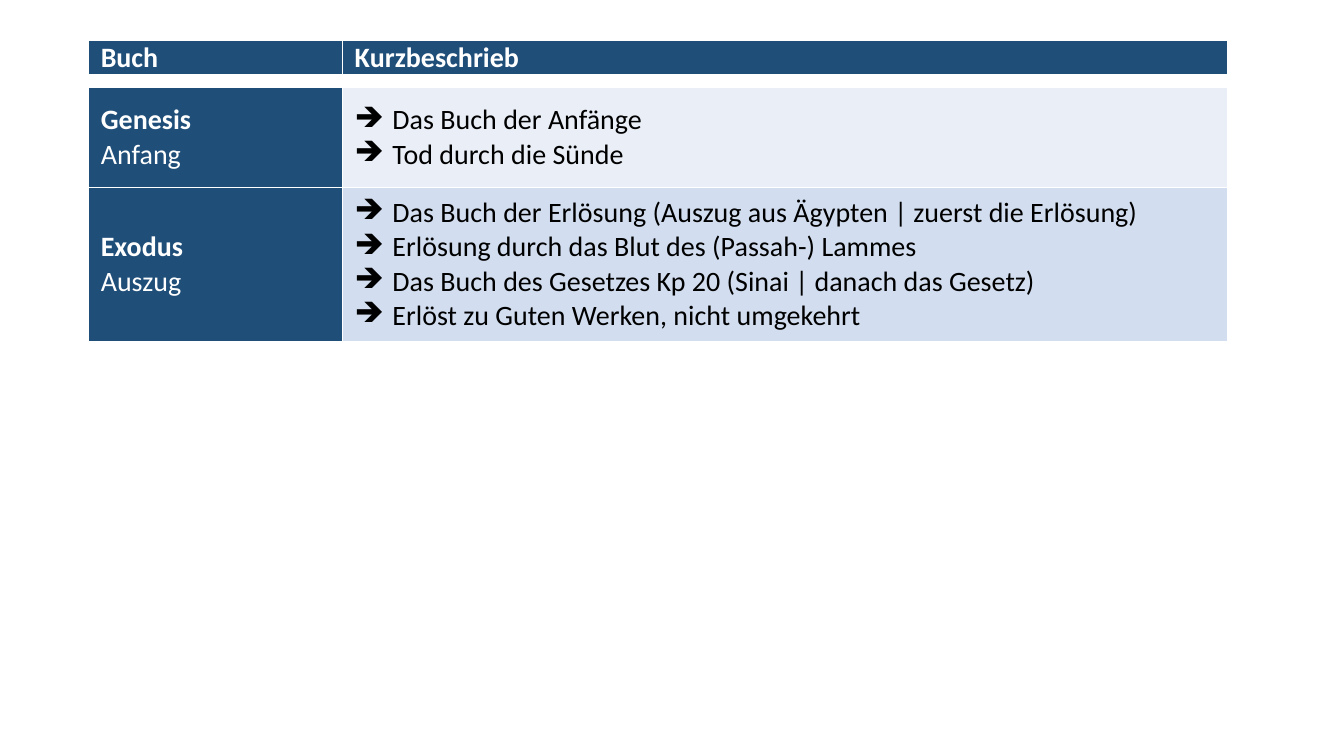
from pptx import Presentation
from pptx.dml.color import RGBColor as Rgb
from pptx.enum.text import MSO_ANCHOR as Anchor, PP_ALIGN as Align
from pptx.oxml import parse_xml
from pptx.oxml.ns import nsdecls
from pptx.util import Cm, Pt
from lxml.etree import SubElement as Sub

HEAD = ["Buch", "Kurzbeschrieb"]
BOOKS = [
    ("Genesis", "Anfang", [
        "Das Buch der Anfänge",
        "Tod durch die Sünde",
    ]),
    ("Exodus", "Auszug", [
        "Das Buch der Erlösung (Auszug aus Ägypten | zuerst die Erlösung)",
        "Erlösung durch das Blut des (Passah-) Lammes",
        "Das Buch des Gesetzes Kp 20 (Sinai | danach das Gesetz)",
        "Erlöst zu Guten Werken, nicht umgekehrt",
    ]),
]
THEME = {
    "font": "Calibri", "size": 20, "gap": 6,
    "navy": "1F4E79", "white": "FFFFFF", "black": "000000",
    "bands": ["EAEFF7", "D2DEEF"],
}
LEFT, TOP = 2.24, 1.02
COLS = [6.4, 22.3]
ROWS = [0.89, 0.3, 2.51, 3.89]
PAD, INDENT = 0.3, 0.95


def assign(obj, vals):
    for key, val in vals.items():
        setattr(obj, key, val)


def edge(cell, low=1):
    props = cell._tc.get_or_add_tcPr()
    for pos, side in enumerate("LRTB"):
        width = Pt(low if side == "B" else 1)
        props.insert(pos, parse_xml(
            f'<a:ln{side} {nsdecls("a")} w="{width}"><a:solidFill>'
            f'<a:srgbClr val="{THEME["white"]}"/></a:solidFill></a:ln{side}>'))


def paint(cell, fill, pad=PAD, anchor=Anchor.MIDDLE, low=1):
    assign(cell, {"margin_left": Cm(pad), "margin_right": Cm(pad),
                  "margin_top": 0, "margin_bottom": 0,
                  "vertical_anchor": anchor})
    cell.fill.solid()
    cell.fill.fore_color.rgb = Rgb.from_string(fill)
    edge(cell, low)


def write(cell, lines, color, align=Align.LEFT, mark=None):
    frame = cell.text_frame
    for pos, (text, bold) in enumerate(lines):
        para = frame.add_paragraph() if pos else frame.paragraphs[0]
        para.alignment = align
        run = para.add_run()
        run.text = text
        assign(run.font, {"name": THEME["font"], "size": Pt(THEME["size"]),
                          "bold": bold})
        run.font.color.rgb = Rgb.from_string(color)
        if mark:
            props = para._p.get_or_add_pPr()
            props.set("marL", str(Cm(INDENT)))
            props.set("indent", str(-Cm(INDENT)))
            props.append(parse_xml(f'<a:buChar {nsdecls("a")} char="{mark}"/>'))


def main():
    deck = Presentation()
    assign(deck, {"slide_width": Cm(33.87), "slide_height": Cm(19.05)})
    slide = deck.slides.add_slide(deck.slide_layouts[6])
    grid = slide.shapes.add_table(
        len(ROWS), len(COLS), Cm(LEFT), Cm(TOP),
        Cm(sum(COLS)), Cm(sum(ROWS))).table
    for col, width in zip(grid.columns, COLS):
        col.width = Cm(width)
    for row, height in zip(grid.rows, ROWS):
        row.height = Cm(height)

    navy, white = THEME["navy"], THEME["white"]
    for col, text in enumerate(HEAD):
        cell = grid.cell(0, col)
        paint(cell, navy, anchor=Anchor.TOP, low=3)
        write(cell, [(text, True)], white, Align.JUSTIFY)
        space = grid.cell(1, col)
        paint(space, white, pad=0)
        para = space.text_frame.paragraphs[0]._p
        Sub(para, para.tag[:-1] + "endParaRPr", sz=str(THEME["gap"] * 100))

    for row, (book, sense, notes) in enumerate(BOOKS, 2):
        name, info = grid.cell(row, 0), grid.cell(row, 1)
        paint(name, navy)
        write(name, [(book, True), (sense, False)], white)
        paint(info, THEME["bands"][row - 2])
        write(info, [(note, False) for note in notes],
              THEME["black"], mark="➔")
    deck.save("out.pptx")


if __name__ == "__main__":
    main()
